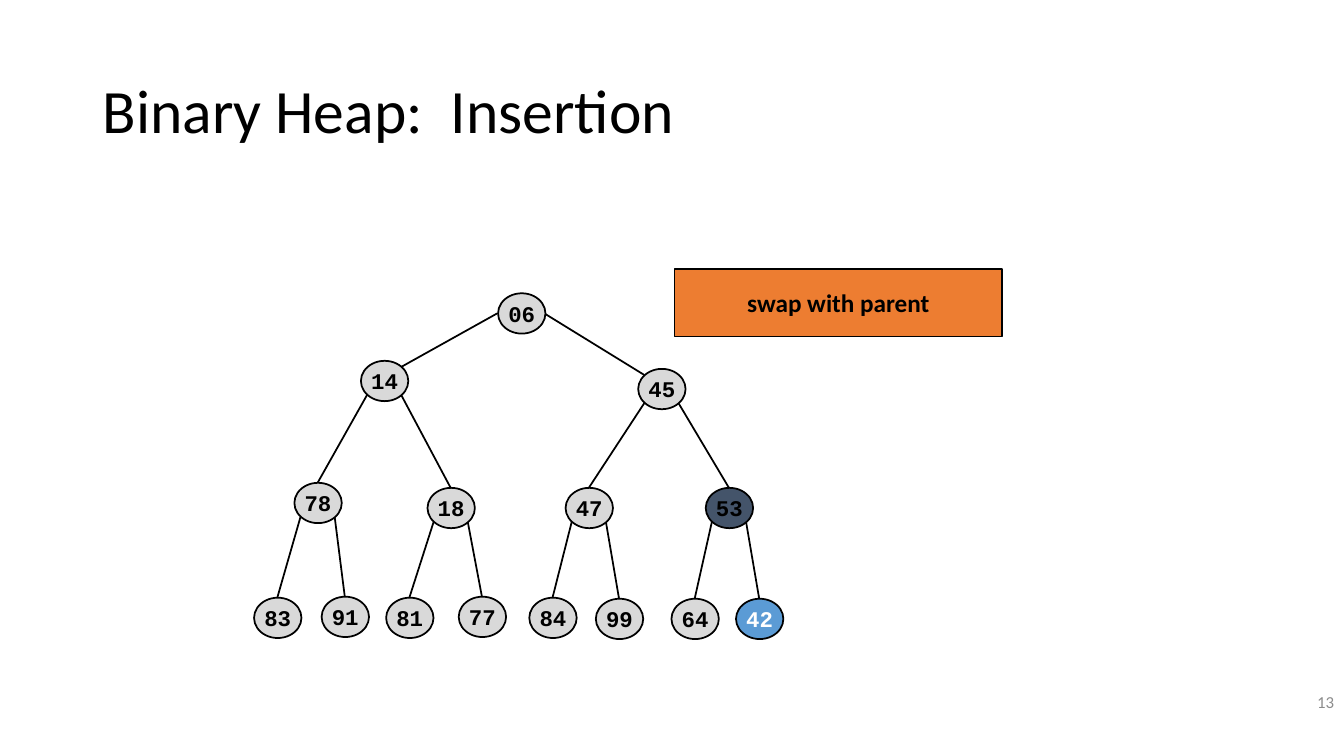
import math

import pptx
import pptx.util
import pptx.dml.color
import pptx.enum.shapes
import pptx.enum.text
import pptx.oxml.ns
import lxml.etree

PX = 9144  # 100 px to the inch
COLORS = {
    "ink": "000000",
    "node": "D9D9D9",
    "parent": "44546A",
    "inserted": "5B9BD5",
    "callout": "ED7D31",
    "white": "FFFFFF",
    "muted": "8C8C8C",
}
SHAPE = pptx.enum.shapes.MSO_SHAPE
ALIGN = pptx.enum.text.PP_ALIGN
NODE_WIDTH, NODE_HEIGHT = 47, 40


def rgb(name):
    return pptx.dml.color.RGBColor.from_string(COLORS[name])


def write(box, text, size, font, color, align, bold=False, wrap=False):
    frame = box.text_frame
    frame.word_wrap = wrap
    frame.vertical_anchor = pptx.enum.text.MSO_ANCHOR.MIDDLE
    para = frame.paragraphs[0]
    para.text = text
    para.alignment = align
    para.font.size = pptx.util.Pt(size)
    para.font.name = font
    para.font.bold = bold
    para.font.color.rgb = rgb(color)
    return para


deck = pptx.Presentation()
deck.slide_width, deck.slide_height = 1333 * PX, 750 * PX
page = deck.slides.add_slide(deck.slide_layouts[6])

title = page.shapes.add_textbox(92 * PX, 40 * PX, 1150 * PX, 145 * PX)
para = write(title, "Binary Heap:  Insertion", 44, "Calibri", "ink", ALIGN.LEFT, wrap=True)
para.line_spacing = 0.9

page_number = page.shapes.add_textbox(1125 * PX, 684 * PX, 208 * PX, 25 * PX)
write(page_number, "13", 12, "Calibri", "muted", ALIGN.RIGHT, wrap=True)

# Heap in level order: label, left, top; the parent of node i is (i - 1) // 2
heap = [
    ("06", 494, 291),
    ("14", 358, 358), ("45", 633, 366),
    ("78", 292, 479), ("18", 424, 484), ("47", 561, 484), ("53", 700, 484),
    ("83", 252, 593), ("91", 319, 592), ("81", 383, 593), ("77", 455, 592),
    ("84", 525, 593), ("99", 591, 594), ("64", 666, 594), ("42", 730, 594),
]
special = {"53": ("parent", "ink"), "42": ("inserted", "white")}

# Edges leave the root at its sides, every other node at its lower diagonals
diagonal_x = round(NODE_WIDTH / 2 * math.sqrt(0.5))
diagonal_y = round(NODE_HEIGHT / 2 * math.sqrt(0.5))
centers = [(left + NODE_WIDTH // 2, top + NODE_HEIGHT // 2) for _, left, top in heap]
for child in range(1, len(heap)):
    parent = (child - 1) // 2
    side = -1 if child % 2 else 1
    (parent_x, parent_y), (child_x, child_y) = centers[parent], centers[child]
    if parent == 0:
        start = parent_x + side * NODE_WIDTH // 2, parent_y
        end = child_x - side * diagonal_x, child_y - diagonal_y
    else:
        start = parent_x + side * diagonal_x, parent_y + diagonal_y
        end = child_x, child_y - NODE_HEIGHT // 2
    edge = page.shapes.add_connector(
        pptx.enum.shapes.MSO_CONNECTOR.STRAIGHT, *(length * PX for length in start + end))
    edge.line.color.rgb = rgb("ink")
    edge.line.width = pptx.util.Pt(1.25)
    lxml.etree.SubElement(edge._element.spPr, pptx.oxml.ns.qn("a:effectLst"))

boxes = []
for label, left, top in heap:
    fill, color = special.get(label, ("node", "ink"))
    boxes.append((SHAPE.OVAL, (left, top, NODE_WIDTH, NODE_HEIGHT),
                  fill, label, 16, "Courier New", color))
boxes.append((SHAPE.RECTANGLE, (669, 267, 325, 67),
              "callout", "swap with parent", 18, "Calibri", "ink"))

for kind, bounds, fill, text, size, font, color in boxes:
    box = page.shapes.add_shape(kind, *(length * PX for length in bounds))
    box.shadow.inherit = False
    box.fill.solid()
    box.fill.fore_color.rgb = rgb(fill)
    box.line.color.rgb = rgb("ink")
    box.line.width = pptx.util.Pt(1.25)
    write(box, text, size, font, color, ALIGN.CENTER, bold=True)

deck.save("out.pptx")
